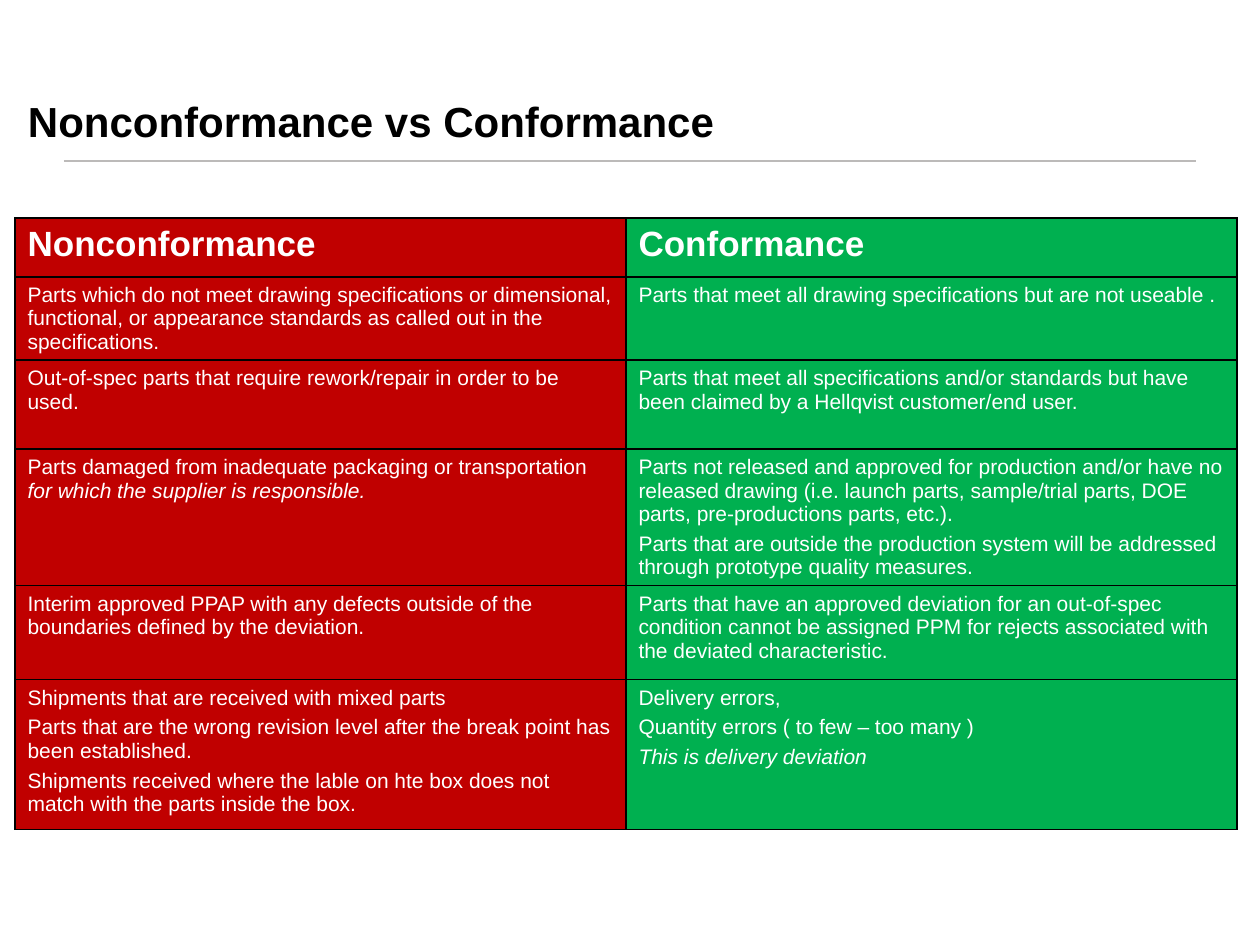
from lxml.etree import SubElement
from pptx import Presentation
from pptx.dml.color import RGBColor
from pptx.enum.shapes import MSO_CONNECTOR as Connector
from pptx.enum.text import MSO_ANCHOR as Anchor, MSO_AUTO_SIZE as AutoSize, PP_ALIGN as Align
from pptx.oxml.ns import qn
from pptx.util import Emu, Pt

SCALE = 914400 / 126
COLUMN_FILLS = ["C00000", "00B050"]
ROW_HEIGHTS = [59, 83, 89, 136, 94, 150]
ROWS = [
    ([[("Nonconformance", False)]],
     [[("Conformance", False)]]),
    ([[("Parts which do not meet drawing specifications or dimensional, functional, "
        "or appearance standards as called out in the specifications.", False)]],
     [[("Parts that meet all drawing specifications but are not useable .", False)]]),
    ([[("Out-of-spec parts that require rework/repair in order to be used.", False)]],
     [[("Parts that meet all specifications and/or standards but have been claimed "
        "by a Hellqvist customer/end user.", False)]]),
    ([[("Parts damaged from inadequate packaging or transportation ", False),
       ("for which the supplier is responsible.", True)]],
     [[("Parts not released and approved for production and/or have no released drawing "
        "(i.e. launch parts, sample/trial parts, DOE parts, pre-productions parts, etc.).", False)],
      [("Parts that are outside the production system will be addressed through "
        "prototype quality measures.", False)]]),
    ([[("Interim approved PPAP with any defects outside of the boundaries defined "
        "by the deviation.", False)]],
     [[("Parts that have an approved deviation for an out-of-spec condition cannot be "
        "assigned PPM for rejects associated with the deviated characteristic.", False)]]),
    ([[("Shipments that are received with mixed parts", False)],
      [("Parts that are the wrong revision level after the break point has been "
        "established.", False)],
      [("Shipments received where the lable on hte box does not match with the parts "
        "inside the box.", False)]],
     [[("Delivery errors,", False)],
      [("Quantity errors ( to few – too many )", False)],
      [("This is delivery deviation", True)]]),
]


def px(length):
    """Turn a length in px into EMU."""
    return Emu(round(length * SCALE))


def color(value):
    """Turn a hex string into a colour."""
    return RGBColor.from_string(value)


def add_span(para, text, size, shade, bold=False, italic=False):
    """Add one formatted run to a paragraph."""
    span = para.add_run()
    span.text = text
    font = span.font
    font.name, font.size, font.bold, font.italic = "Arial", Pt(size), bold, italic
    font.color.rgb = color(shade)


def place_title(page, left, top, width, height):
    """Move the title placeholder into the box and fill it."""
    title = page.shapes.title
    title.left, title.top, title.width, title.height = map(px, (left, top, width, height))
    frame = title.text_frame
    frame.margin_left = frame.margin_right = frame.margin_bottom = 0
    frame.margin_top = px(24)
    frame.vertical_anchor = Anchor.TOP
    frame.auto_size = AutoSize.NONE
    frame.word_wrap = True
    para = frame.paragraphs[0]
    para.alignment = Align.LEFT
    add_span(para, "Nonconformance vs Conformance", 24, "000000", bold=True)


def add_rule(page, left, top, width):
    """Draw the grey rule below the title."""
    rule = page.shapes.add_connector(
        Connector.STRAIGHT, px(left), px(top), px(left + width), px(top))
    rule.line.color.rgb = color("BCBAB9")
    rule.line.width = Pt(1)
    SubElement(rule.element.spPr, qn("a:effectLst"))


def add_borders(cell):
    """Give a cell a thin black line on every side."""
    properties = cell._tc.get_or_add_tcPr()
    for side in ("a:lnL", "a:lnR", "a:lnT", "a:lnB"):
        border = SubElement(properties, qn(side), w=str(Pt(1)))
        fill = SubElement(border, qn("a:solidFill"))
        SubElement(fill, qn("a:srgbClr"), val="000000")


def fill_cell(cell, paragraphs, shade, is_header):
    """Format a cell and write its paragraphs."""
    add_borders(cell)
    cell.fill.solid()
    cell.fill.fore_color.rgb = color(shade)
    frame = cell.text_frame
    for index, spans in enumerate(paragraphs):
        para = frame.add_paragraph() if index else frame.paragraphs[0]
        if index:
            para.space_before = Pt(3.6)
        for text, italic in spans:
            add_span(para, text, 20 if is_header else 12, "FFFFFF", is_header, italic)


def add_comparison(page, left, top, width):
    """Build the two-column comparison table."""
    table = page.shapes.add_table(
        len(ROWS), len(COLUMN_FILLS), px(left), px(top), px(width), px(sum(ROW_HEIGHTS))).table
    for column in table.columns:
        column.width = px(width / len(COLUMN_FILLS))
    for row_index, (height, entries) in enumerate(zip(ROW_HEIGHTS, ROWS)):
        table.rows[row_index].height = px(height)
        for column_index, (paragraphs, shade) in enumerate(zip(entries, COLUMN_FILLS)):
            fill_cell(table.cell(row_index, column_index), paragraphs, shade, row_index == 0)


def main():
    """Build the slide and save the deck."""
    deck = Presentation()
    deck.slide_width, deck.slide_height = px(1260), px(945)
    page = deck.slides.add_slide(deck.slide_layouts[5])
    add_rule(page, 64, 161, 1132)
    add_comparison(page, 15, 218, 1222)
    place_title(page, 28, 71, 1013, 83)
    deck.save("out.pptx")


if __name__ == "__main__":
    main()
